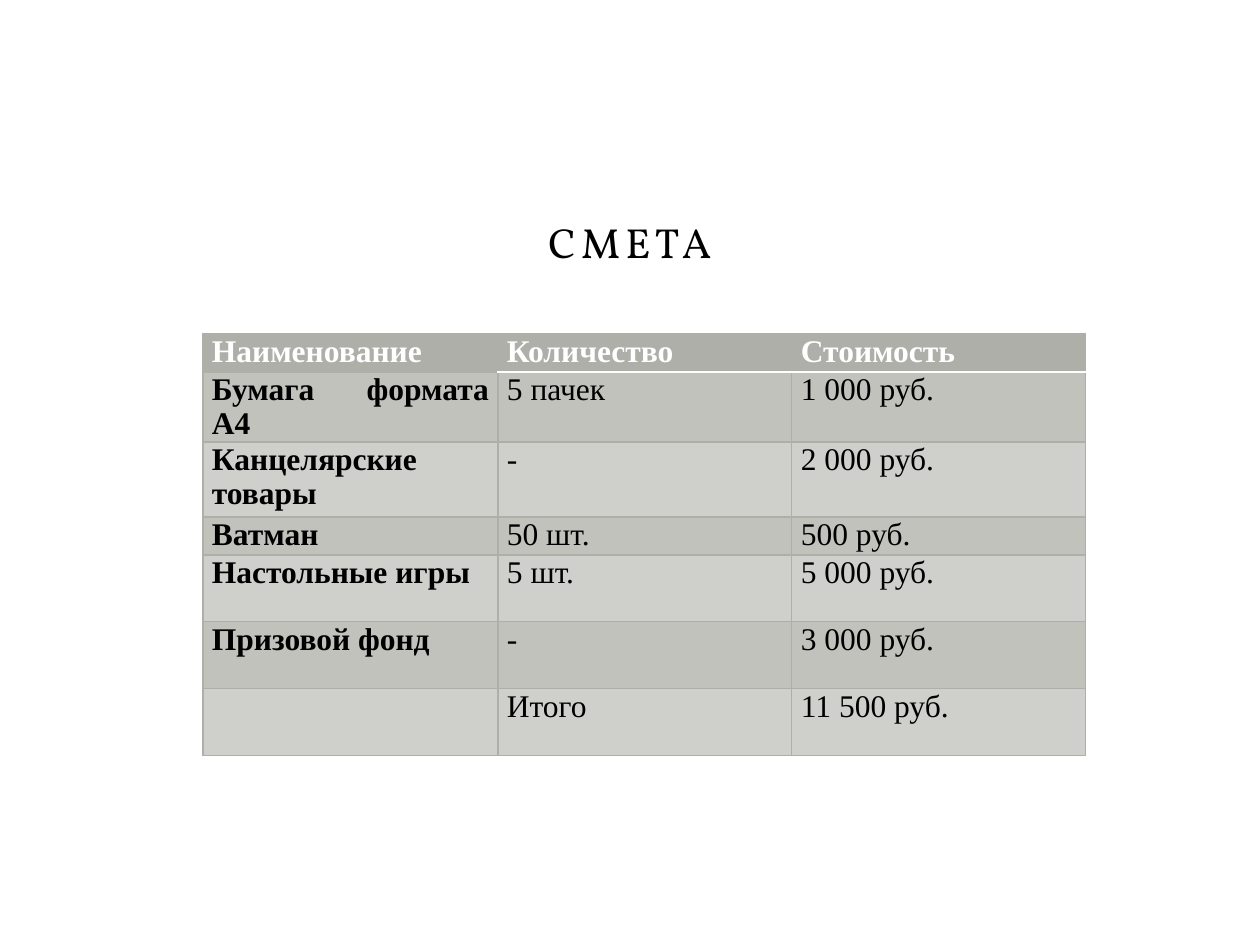
from dataclasses import dataclass

from lxml.etree import SubElement
from pptx import Presentation
from pptx.dml.color import RGBColor
from pptx.enum.text import MSO_ANCHOR, PP_ALIGN
from pptx.oxml.ns import qn
from pptx.util import Pt

PX = 914400 / 126


@dataclass(frozen=True)
class Theme:
    title_font: str = "Vollkorn"
    table_font: str = "Times New Roman"
    title_size: int = 24
    table_size: int = 18
    header: str = "AEAFA9"
    dark_band: str = "C2C2BD"
    light_band: str = "CFCFCB"
    ink: str = "000000"
    white: str = "FFFFFF"


theme = Theme()


def px(length):
    return round(length * PX)


def add_border(cell, side, color, width):
    """Draw one edge of a cell; side is L, R, T or B, called in that order."""
    line = SubElement(cell._tc.get_or_add_tcPr(), qn(f"a:ln{side}"), w=str(Pt(width)))
    fill = SubElement(line, qn("a:solidFill"))
    SubElement(fill, qn("a:srgbClr"), val=color)


presentation = Presentation()
presentation.slide_width, presentation.slide_height = px(1260), px(945)
slide = presentation.slides.add_slide(presentation.slide_layouts[5])

title = slide.shapes.title
title.left, title.top, title.width, title.height = px(189), px(179), px(882), px(94)
title.text_frame.vertical_anchor = MSO_ANCHOR.BOTTOM
heading = title.text_frame.paragraphs[0]
heading.alignment = PP_ALIGN.CENTER
heading_run = heading.add_run()
heading_run.text = "СМЕТА"
heading_run.font.name = theme.title_font
heading_run.font.size = Pt(theme.title_size)
heading_run.font.color.rgb = RGBColor.from_string(theme.ink)
heading_run._r.get_or_add_rPr().set("spc", "300")

estimate = [
    ("Наименование", "Количество", "Стоимость"),
    ("Бумага формата А4", "5 пачек", "1 000 руб."),
    ("Канцелярские товары", "-", "2 000 руб."),
    ("Ватман", "50 шт.", "500 руб."),
    ("Настольные игры", "5 шт.", "5 000 руб."),
    ("Призовой фонд", "-", "3 000 руб."),
    ("", "Итого", "11 500 руб."),
]
column_widths = [295, 294, 294]
row_heights = [38, 70, 75, 38, 67, 67, 67]

table = slide.shapes.add_table(
    len(estimate), len(column_widths),
    px(203), px(334), px(sum(column_widths)), px(sum(row_heights)),
).table
table.horz_banding = False
for column, width in zip(table.columns, column_widths):
    column.width = px(width)
for row, height in zip(table.rows, row_heights):
    row.height = px(height)

for r, entries in enumerate(estimate):
    is_header = r == 0
    band = theme.header if is_header else theme.dark_band if r % 2 else theme.light_band
    for c, entry in enumerate(entries):
        cell = table.cell(r, c)
        cell.margin_left = cell.margin_right = px(9)
        cell.margin_top = cell.margin_bottom = 0

        for side in "LRTB":
            under_header = c > 0 and (r, side) in [(0, "B"), (1, "T")]
            add_border(cell, side, theme.white if under_header else theme.header, 0.75)
        cell.fill.solid()
        cell.fill.fore_color.rgb = RGBColor.from_string(band)

        paragraph = cell.text_frame.paragraphs[0]
        paragraph.alignment = PP_ALIGN.JUSTIFY
        if not entry:
            continue
        run = paragraph.add_run()
        run.text = entry
        run.font.name = theme.table_font
        run.font.size = Pt(theme.table_size)
        run.font.bold = is_header or c == 0
        run.font.color.rgb = RGBColor.from_string(theme.white if is_header else theme.ink)

presentation.save("out.pptx")
